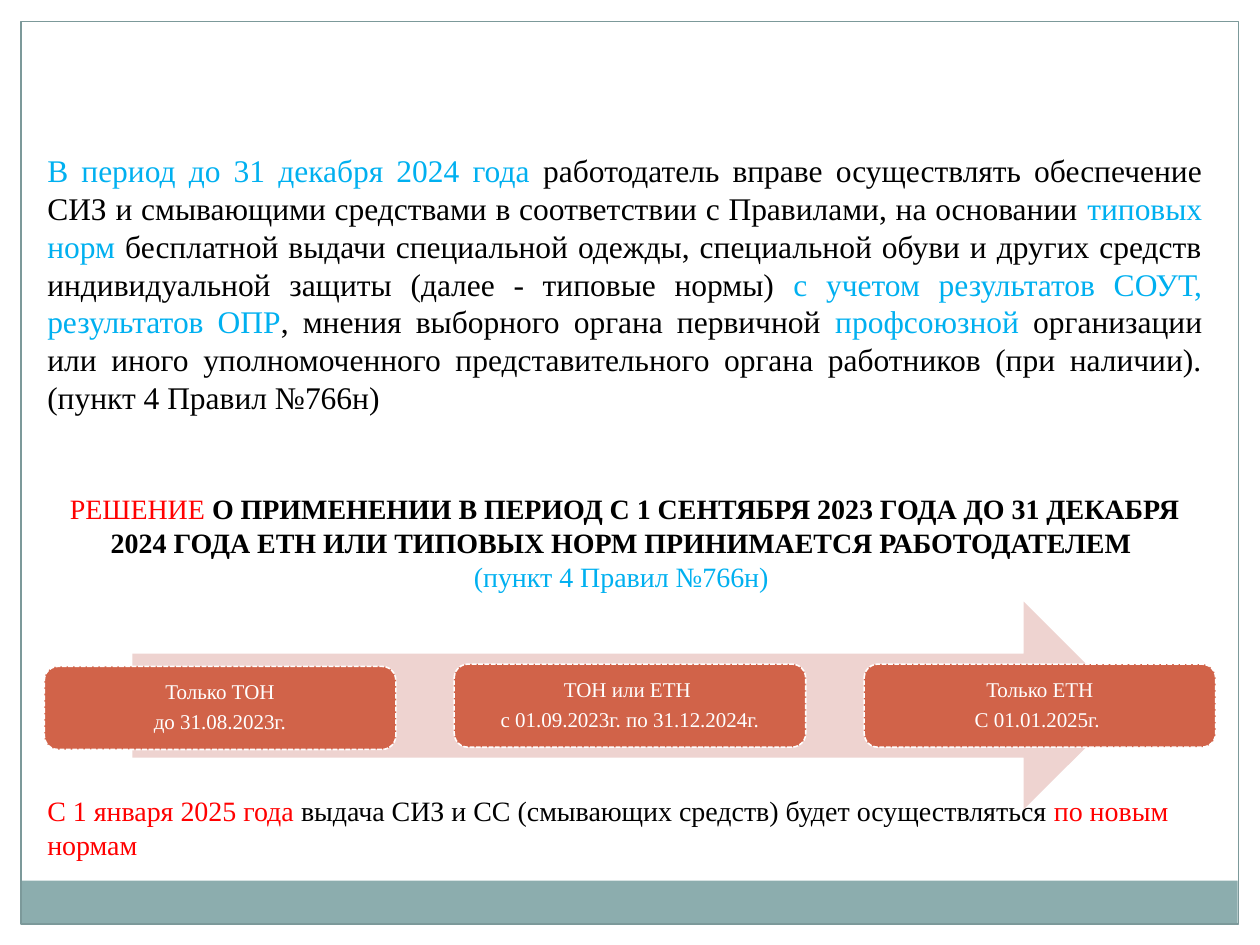
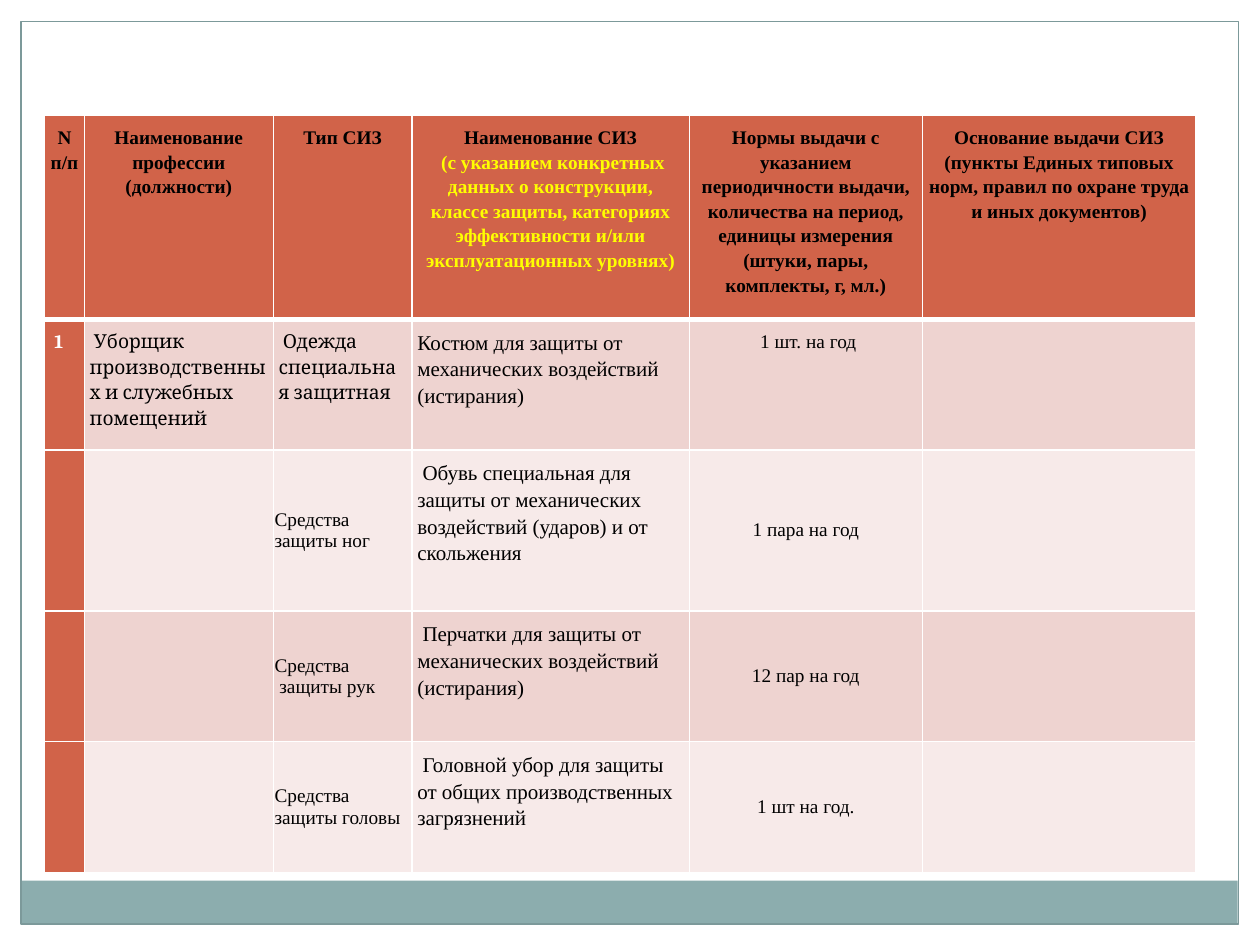
import lxml.etree
import pptx
import pptx.dml.color
import pptx.enum.dml
import pptx.enum.shapes
import pptx.enum.text
import pptx.oxml.ns
import pptx.util

Pt = pptx.util.Pt
Shape = pptx.enum.shapes.MSO_SHAPE
Align = pptx.enum.text.PP_ALIGN
Anchor = pptx.enum.text.MSO_ANCHOR

BLACK, WHITE, RED, BLUE, YELLOW = "000000", "FFFFFF", "FF0000", "00B0F0", "FFFF00"
BRICK, ROSE, PALE_ROSE = "D16349", "EED3D0", "F7EAE9"
BAND, FRAME = "8CADAE", "7C999A"
SERIF, CAMBRIA = "Times New Roman", "Cambria"
PAGE_WIDTH, PAGE_HEIGHT, EDGE = 720, 540, 12

PERIODS = [
    ("Только ТОН", "до 31.08.2023г.", 380.8),
    ("ТОН или ЕТН ", "с 01.09.2023г. по 31.12.2024г.", 379.5),
    ("Только ЕТН", "С 01.01.2025г. ", 379.5),
]

COLUMN_WIDTHS = [22.7, 108, 79.2, 158.5, 133.2, 156.4]
ROW_HEIGHTS = [116.5, 74.6, 92, 74.8, 74.8]
HEADERS = [
    ["N п/п"],
    ["Наименование профессии (должности)"],
    ["Тип СИЗ"],
    ["Наименование СИЗ",
     [(" (с указанием конкретных данных о конструкции, классе защиты, "
       "категориях эффективности и/или эксплуатационных уровнях)", YELLOW)]],
    ["Нормы выдачи с указанием периодичности выдачи, количества на период, "
     "единицы измерения (штуки, пары, комплекты, г, мл.)"],
    ["Основание выдачи СИЗ (пункты Единых типовых норм, правил по охране труда "
     "и иных документов)"],
]
FIRST_ROW = [" 1", " Уборщик производственных и служебных помещений",
             " Одежда специальная защитная",
             "Костюм для защиты от механических воздействий (истирания)",
             " 1 шт. на год"]
OTHER_ROWS = [
    (["Средства", "защиты ног"],
     " Обувь специальная для защиты от механических воздействий (ударов) и от скольжения",
     "1 пара на год"),
    (["Средства", " защиты рук"],
     " Перчатки для защиты от механических воздействий (истирания)",
     "12 пар на год"),
    (["Средства", "защиты головы"],
     " Головной убор для защиты от общих производственных загрязнений",
     "1 шт на год."),
]


def rgb(color):
    return pptx.dml.color.RGBColor.from_string(color)


def write(frame, paragraphs, size=11, color=BLACK, font=SERIF, bold=False,
          align=Align.LEFT, spacing=1.0, gap=0):
    for index, content in enumerate(paragraphs):
        para = frame.paragraphs[0] if index == 0 else frame.add_paragraph()
        para.alignment = align
        para.line_spacing = spacing
        para.space_before = Pt(gap if index else 0)
        spans = [(content, color)] if isinstance(content, str) else content
        for text, span_color, *weight in spans:
            span = para.add_run()
            span.text = text
            span.font.name = font
            span.font.size = Pt(size)
            span.font.bold = weight[0] if weight else bold
            span.font.color.rgb = rgb(span_color)


def set_insets(target, horizontal, vertical):
    target.margin_left = target.margin_right = Pt(horizontal)
    target.margin_top = target.margin_bottom = Pt(vertical)


def add_text(page, left, top, width, height, paragraphs, **style):
    box = page.shapes.add_textbox(Pt(left), Pt(top), Pt(width), Pt(height))
    box.text_frame.word_wrap = True
    set_insets(box.text_frame, 0, 0)
    write(box.text_frame, paragraphs, **style)


def add_shape(page, kind, left, top, width, height, fill=None, line=None, weight=0.75):
    shape = page.shapes.add_shape(kind, Pt(left), Pt(top), Pt(width), Pt(height))
    shape.shadow.inherit = False
    if fill:
        shape.fill.solid()
        shape.fill.fore_color.rgb = rgb(fill)
    else:
        shape.fill.background()
    if line:
        shape.line.color.rgb = rgb(line)
        shape.line.width = Pt(weight)
    else:
        shape.line.fill.background()
    return shape


def add_page(deck):
    page = deck.slides.add_slide(deck.slide_layouts[6])
    for left, width, height in [(0, PAGE_WIDTH, EDGE),
                                (PAGE_WIDTH - EDGE, EDGE, PAGE_HEIGHT),
                                (0, EDGE, PAGE_HEIGHT)]:
        add_shape(page, Shape.RECTANGLE, left, 0, width, height, fill=WHITE)
    add_shape(page, Shape.RECTANGLE, 11.75, 503.3, 695.5, 24.5, fill=BAND)
    add_shape(page, Shape.RECTANGLE, 12, 12.25, 695.75, 515.75, line=FRAME)
    return page


def add_period(page, left, top, lines):
    box = add_shape(page, Shape.ROUNDED_RECTANGLE, left, top, 200.9, 47.5,
                    fill=BRICK, line=WHITE, weight=0.9)
    box.line.dash_style = pptx.enum.dml.MSO_LINE.SQUARE_DOT
    box.text_frame.word_wrap = True
    box.text_frame.vertical_anchor = Anchor.MIDDLE
    set_insets(box.text_frame, 6, 6)
    write(box.text_frame, lines, size=12, color=WHITE, align=Align.CENTER,
          spacing=0.9, gap=4.2)


def set_border(cell, side, weight):
    properties = cell._tc.get_or_add_tcPr()
    line = lxml.etree.SubElement(properties, pptx.oxml.ns.qn("a:ln" + side),
                                 w=str(Pt(weight)))
    fill = lxml.etree.SubElement(line, pptx.oxml.ns.qn("a:solidFill"))
    lxml.etree.SubElement(fill, pptx.oxml.ns.qn("a:srgbClr"), val=WHITE)


def format_cell(cell, row, column):
    set_border(cell, "L", 1)
    set_border(cell, "R", 1)
    set_border(cell, "T", 3 if row == 1 else 1)
    set_border(cell, "B", 3 if row == 0 else 1)
    cell.fill.solid()
    shade = ROSE if row % 2 else PALE_ROSE
    cell.fill.fore_color.rgb = rgb(BRICK if row == 0 or column == 0 else shade)
    set_insets(cell, 3.1, 4.9)


def write_middle(cell, paragraphs, **style):
    cell.vertical_anchor = Anchor.MIDDLE
    set_insets(cell, 0.7, 0.5)
    write(cell.text_frame, paragraphs, **style)


def add_norms_table(page):
    frame = page.shapes.add_table(len(ROW_HEIGHTS), len(COLUMN_WIDTHS), Pt(25.5), Pt(66),
                                  Pt(sum(COLUMN_WIDTHS)), Pt(sum(ROW_HEIGHTS)))
    table = frame.table
    table.first_row = table.horz_banding = False
    for column, width in zip(table.columns, COLUMN_WIDTHS):
        column.width = Pt(width)
    for row, height in zip(table.rows, ROW_HEIGHTS):
        row.height = Pt(height)
    for row in range(len(ROW_HEIGHTS)):
        for column in range(len(COLUMN_WIDTHS)):
            format_cell(table.cell(row, column), row, column)
    for column, header in enumerate(HEADERS):
        write(table.cell(0, column).text_frame, header, bold=True,
              align=Align.CENTER, spacing=1.15)
    first_row_styles = [dict(font=CAMBRIA, color=WHITE, bold=True), dict(font=CAMBRIA),
                        dict(font=CAMBRIA), dict(size=12), dict(align=Align.CENTER)]
    for column, (text, style) in enumerate(zip(FIRST_ROW, first_row_styles)):
        write(table.cell(1, column).text_frame, [text], spacing=1.15, **style)
    for row, (kind, item, norm) in enumerate(OTHER_ROWS, start=2):
        write_middle(table.cell(row, 2), kind)
        write(table.cell(row, 3).text_frame, [item], size=12, spacing=1.15)
        write_middle(table.cell(row, 4), [norm], align=Align.CENTER)


def build_transition_page(deck):
    page = add_page(deck)
    add_text(page, 27, 86.4, 660, 152, [[
        ("В период до 31 декабря 2024 года ", BLUE),
        ("работодатель вправе осуществлять обеспечение СИЗ и смывающими средствами "
         "в соответствии с Правилами, на основании ", BLACK),
        ("типовых норм", BLUE),
        (" бесплатной выдачи специальной одежды, специальной обуви и других средств "
         "индивидуальной защиты (далее - типовые нормы) ", BLACK),
        ("с учетом результатов СОУТ, результатов ОПР", BLUE),
        (", мнения выборного органа первичной ", BLACK),
        ("профсоюзной", BLUE),
        (" организации или иного уполномоченного представительного органа работников "
         "(при наличии). (пункт 4 Правил №766н)", BLACK),
    ]], size=18, align=Align.JUSTIFY)
    add_text(page, 27, 281.1, 660, 58, [
        [("РЕШЕНИЕ ", RED),
         ("О ПРИМЕНЕНИИ В ПЕРИОД С 1 СЕНТЯБРЯ 2023 ГОДА ДО 31 ДЕКАБРЯ 2024 ГОДА ЕТН "
          "ИЛИ ТИПОВЫХ НОРМ ПРИНИМАЕТСЯ РАБОТОДАТЕЛЕМ ", BLACK, True)],
        [("(пункт 4 Правил №766н) ", BLUE)],
    ], size=16, align=Align.CENTER)
    add_text(page, 27, 453.6, 660, 39, [[
        ("С 1 января 2025 года ", RED),
        ("выдача СИЗ и СС (смывающих средств) будет осуществляться ", BLACK),
        ("по новым нормам", RED),
    ]], size=16)
    add_shape(page, Shape.RIGHT_ARROW, 75.6, 343.8, 568.8, 118.8, fill=ROSE)
    for index, (name, dates, top) in enumerate(PERIODS):
        add_period(page, 25.3 + 234.25 * index, top, [name, dates])


def main():
    deck = pptx.Presentation()
    deck.slide_width, deck.slide_height = Pt(PAGE_WIDTH), Pt(PAGE_HEIGHT)
    build_transition_page(deck)
    add_norms_table(add_page(deck))
    deck.save("out.pptx")


if __name__ == "__main__":
    main()
